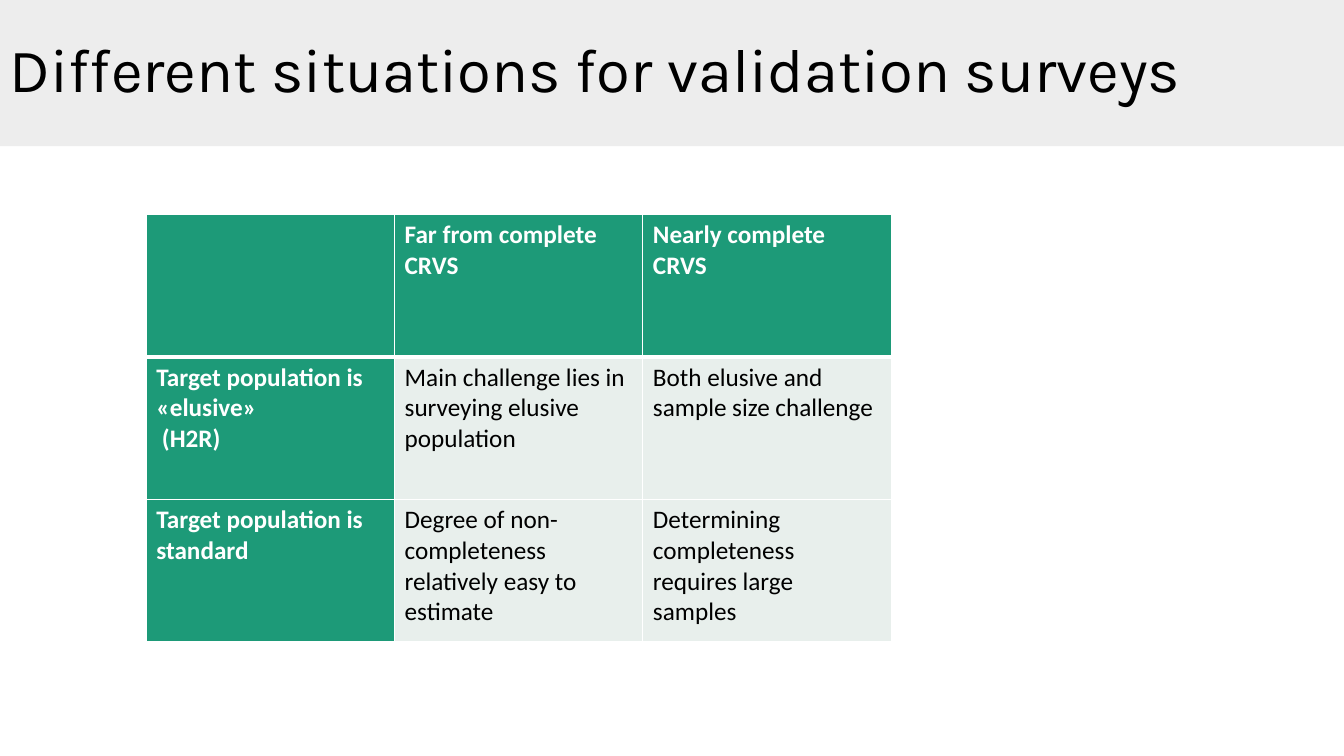
"""Build the slide on different situations for validation surveys."""
from dataclasses import dataclass

from lxml import etree
from pptx import Presentation
from pptx.dml.color import RGBColor
from pptx.enum.shapes import MSO_SHAPE
from pptx.enum.text import MSO_ANCHOR, PP_ALIGN
from pptx.oxml.ns import qn
from pptx.util import Inches, Pt

RECTANGLE = MSO_SHAPE.RECTANGLE
MIDDLE = MSO_ANCHOR.MIDDLE
LEFT = PP_ALIGN.LEFT


@dataclass(frozen=True)
class Theme:
    """Colours, fonts and sizes of the slide."""
    green: str = "1D9A78"
    mint: str = "E8EFEC"
    band: str = "EAEAEA"
    white: str = "FFFFFF"
    black: str = "000000"
    band_opacity: int = 82
    title_font: str = "Karla"
    title_size: int = 44
    body_font: str = "Calibri"
    body_size: int = 18
    thin: int = 1
    thick: int = 3


@dataclass(frozen=True)
class Area:
    """A place given in percent of the slide's width and height."""
    left: float
    top: float
    width: float
    height: float

    def lengths(self, deck) -> tuple[int, int, int, int]:
        """Return left, top, width and height as slide lengths."""
        across, down = deck.slide_width / 100, deck.slide_height / 100
        return (round(self.left * across), round(self.top * down),
                round(self.width * across), round(self.height * down))


@dataclass(frozen=True)
class CellLook:
    """Fill, text colour, weight and lower border of a cell."""
    fill: str
    ink: str
    bold: bool
    bottom: int


THEME = Theme()
HEADER = CellLook(THEME.green, THEME.white, True, THEME.thick)
LABEL = CellLook(THEME.green, THEME.white, True, THEME.thin)
BODY = CellLook(THEME.mint, THEME.black, False, THEME.thin)
TITLE_AREA = Area(0, 0, 100, 19.33)
TABLE_AREA = Area(10.88, 28.4, 55.44, 56.52)
TITLE = "Different situations for validation surveys"
SITUATIONS = [
    [[], ["Far from complete", "CRVS"], ["Nearly complete", "CRVS"]],
    [["Target population is «elusive»", " (H2R)"],
     ["Main challenge lies in surveying elusive population"],
     ["Both elusive and sample size challenge"]],
    [["Target population is standard"],
     ["Degree of non-completeness relatively easy to estimate"],
     ["Determining completeness requires large samples"]],
]


def add_span(para, text: str, font: str, size: int, ink: str, bold: bool = False) -> None:
    """Add one formatted run to a paragraph."""
    span = para.add_run()
    span.text = text
    span.font.name = font
    span.font.size = Pt(size)
    span.font.bold = bold
    span.font.color.rgb = RGBColor.from_string(ink)


def add_title(deck, page) -> None:
    """Draw the translucent title band with its text."""
    box = page.shapes.add_shape(RECTANGLE, *TITLE_AREA.lengths(deck))
    box.shadow.inherit = False
    box.fill.solid()
    box.fill.fore_color.rgb = RGBColor.from_string(THEME.band)
    colour = box.fill._xPr.find(qn("a:solidFill"))[0]
    etree.SubElement(colour, qn("a:alpha"), val=str(THEME.band_opacity * 1000))
    box.line.fill.background()
    frame = box.text_frame
    frame.word_wrap = True
    frame.vertical_anchor = MIDDLE
    para = frame.paragraphs[0]
    para.alignment = LEFT
    para.line_spacing = 0.9
    add_span(para, TITLE, THEME.title_font, THEME.title_size, THEME.black)


def add_borders(cell, widths: dict[str, int]) -> None:
    """Give a cell white borders of the given widths."""
    properties = cell._tc.get_or_add_tcPr()
    for side, width in widths.items():
        line = etree.SubElement(properties, qn(f"a:ln{side}"), w=str(Pt(width)))
        fill = etree.SubElement(line, qn("a:solidFill"))
        etree.SubElement(fill, qn("a:srgbClr"), val=THEME.white)


def fill_cell(cell, lines: list[str], look: CellLook, top: int) -> None:
    """Format a cell and write one paragraph for each line."""
    add_borders(cell, {"L": THEME.thin, "R": THEME.thin, "T": top, "B": look.bottom})
    cell.fill.solid()
    cell.fill.fore_color.rgb = RGBColor.from_string(look.fill)
    frame = cell.text_frame
    for index, text in enumerate(lines):
        para = frame.add_paragraph() if index else frame.paragraphs[0]
        add_span(para, text, THEME.body_font, THEME.body_size, look.ink, look.bold)


def add_situations(deck, page) -> None:
    """Draw the table of survey situations."""
    table = page.shapes.add_table(
        len(SITUATIONS), len(SITUATIONS[0]), *TABLE_AREA.lengths(deck)).table
    table.horz_banding = False
    for row, entries in enumerate(SITUATIONS):
        for column, lines in enumerate(entries):
            look = HEADER if row == 0 else LABEL if column == 0 else BODY
            top = THEME.thick if row == 1 else THEME.thin
            fill_cell(table.cell(row, column), lines, look, top)


def main() -> None:
    """Build and save the deck."""
    deck = Presentation()
    deck.slide_width, deck.slide_height = Inches(13.33), Inches(7.5)
    page = deck.slides.add_slide(deck.slide_layouts[6])
    add_title(deck, page)
    add_situations(deck, page)
    deck.save("out.pptx")


if __name__ == "__main__":
    main()
